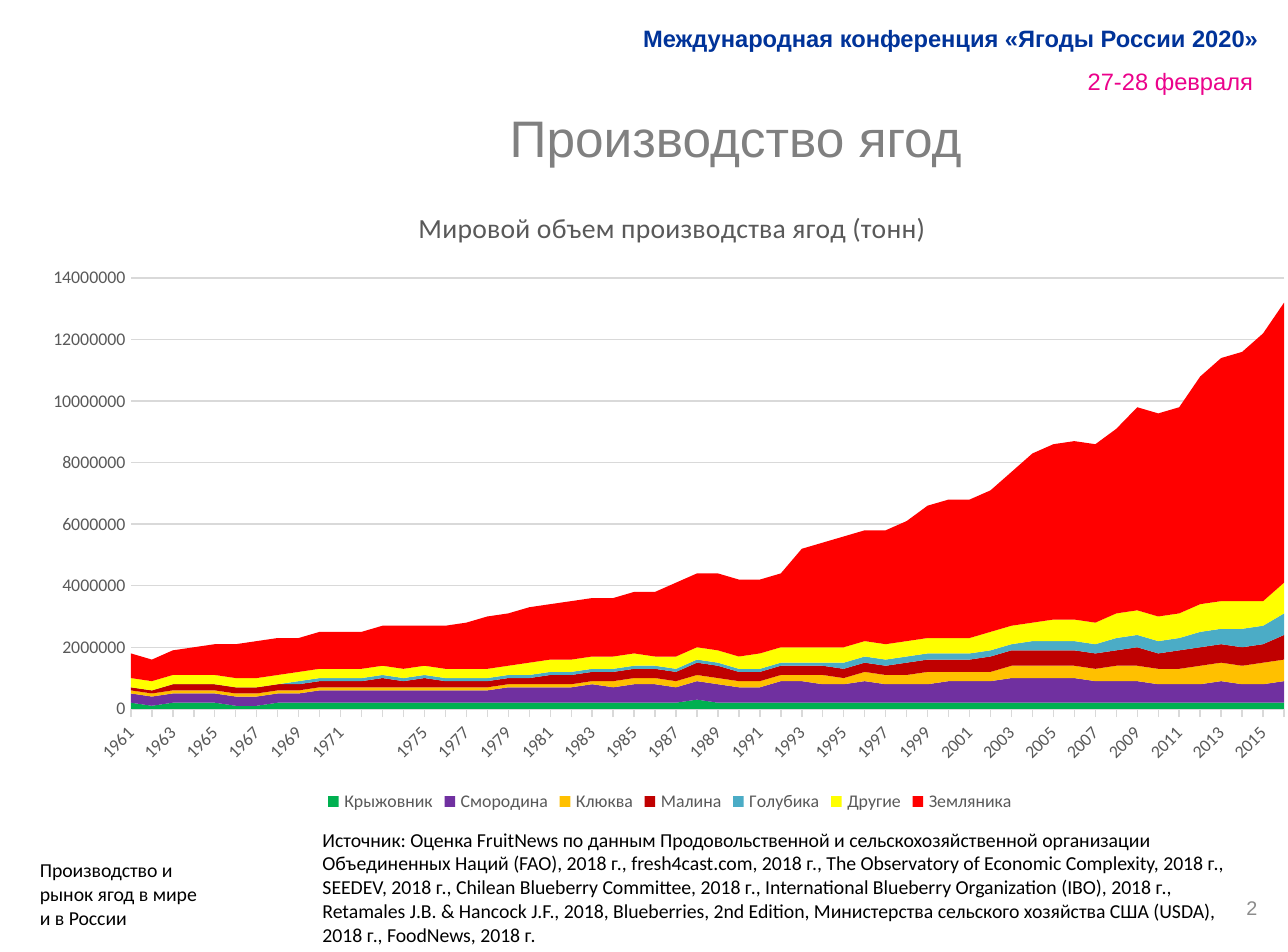
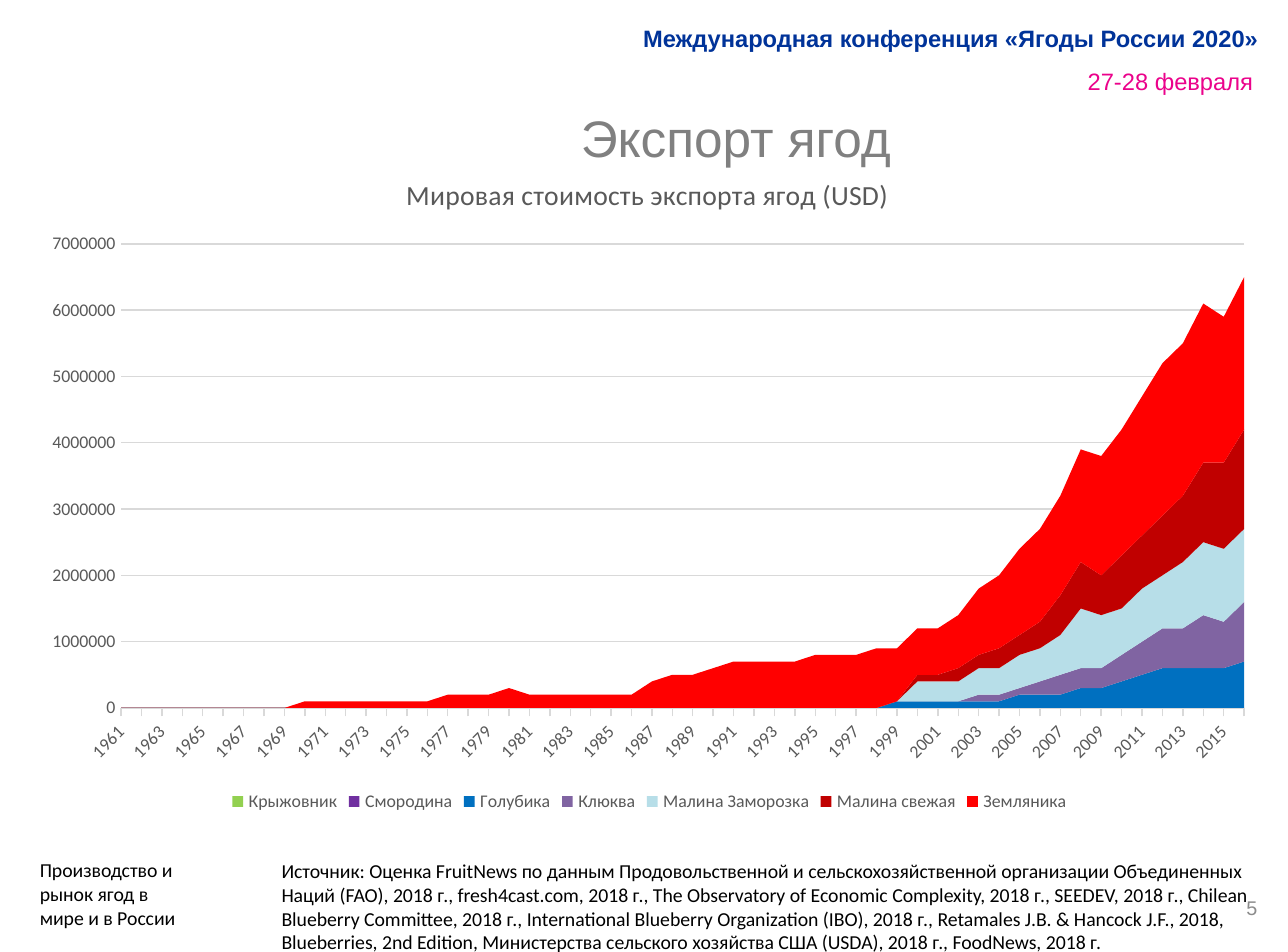
from pptx import Presentation
from pptx.chart.data import CategoryChartData
from pptx.dml.color import RGBColor
from pptx.enum import chart as ch, text as tx
from pptx.oxml import parse_xml
from pptx.oxml.ns import nsdecls
from pptx.util import Pt

HUES = {
    "navy": "003399", "pink": "EB028B", "head": "808080", "page": "8C8C8C",
    "ink": "000000", "axis": "595959", "grid": "D9D9D9",
    "green": "00B050", "lime": "92D050", "plum": "7030A0", "gold": "FFC000",
    "wine": "C00000", "teal": "4BACC6", "sun": "FFFF00", "red": "FF0000",
    "blue": "0070C0", "mauve": "8064A2", "ice": "B7DEE8",
}
ALIGN = tx.PP_ALIGN
MID = tx.MSO_ANCHOR.MIDDLE
GROW = tx.MSO_AUTO_SIZE.SHAPE_TO_FIT_TEXT
SLIM = {"margin_left": Pt(5.76), "margin_right": Pt(5.76), "margin_top": Pt(2.88), "margin_bottom": Pt(2.88)}
FONTS = {
    "conf": {"name": "Arial", "size": Pt(12), "bold": True, "hue": "navy"},
    "date": {"name": "Arial", "size": Pt(12), "hue": "pink"},
    "title": {"name": "Arial", "size": Pt(26), "hue": "head"},
    "page": {"name": "Arial", "size": Pt(10), "hue": "page"},
    "body": {"name": "Calibri", "size": Pt(10), "hue": "ink"},
    "axis": {"name": "Calibri", "size": Pt(9), "hue": "axis"},
    "chart": {"name": "Calibri", "size": Pt(14), "bold": False, "hue": "axis"},
}
SOURCE = (
    "Источник: Оценка FruitNews по данным Продовольственной и сельскохозяйственной организации "
    "Объединенных Наций (FAO), 2018 г., fresh4cast.com, 2018 г., The Observatory of Economic Complexity, "
    "2018 г., SEEDEV, 2018 г., Chilean Blueberry Committee, 2018 г., International Blueberry Organization "
    "(IBO), 2018 г., Retamales J.B. & Hancock J.F., 2018, Blueberries, 2nd Edition, Министерства сельского "
    "хозяйства США (USDA), 2018 г., FoodNews, 2018 г."
)
YEARS = [str(year) for year in range(1961, 2017)]
UNIT = 100000
CROPS = [
    ("Крыжовник", "green", [2, 1, 2, 2, 2, 1, 1] + [2] * 20 + [3] + [2] * 28),
    ("Смородина", "plum", [3] * 9 + [4] * 9 + [5] * 4 + [6, 5, 6, 6, 5, 6, 6, 5, 5, 7, 7, 6, 6, 7, 6, 6, 6,
                           7, 7, 7, 8, 8, 8, 8, 7, 7, 7, 6, 6, 6, 7, 6, 6, 7]),
    ("Клюква", "gold", [1] * 23 + [2] * 10 + [3, 2, 3, 3, 3, 4, 3, 3, 3, 4, 4, 4, 4, 4,
                        5, 5, 5, 5, 6, 6, 6, 7, 7]),
    ("Малина", "wine", [1, 1] + [2] * 10 + [3, 2, 3] + [2] * 5 + [3] * 7 + [4, 4] + [3] * 8
     + [4] * 4 + [5] * 7 + [6, 5] + [6] * 5 + [8]),
    ("Голубика", "teal", [0] * 8 + [1] * 26 + [2] * 9 + [3] * 4 + [4] * 4 + [5, 5, 6, 6, 7]),
    ("Другие", "sun", [3] * 19 + [4] * 6 + [3] + [4] * 4 + [5] * 11 + [6] * 3 + [7] * 3 + [8] * 4
     + [9, 9, 9, 8, 10]),
    ("Земляника", "red", [8, 7, 8, 9, 10, 11, 12, 12, 11, 12, 12, 12, 13, 14, 13, 14, 15, 17, 17, 18, 18,
                          19, 19, 19, 20, 21, 24, 24, 25, 25, 24, 24, 32, 34, 36, 36, 37, 39, 43, 45, 45,
                          46, 50, 55, 57, 58, 58, 60, 66, 66, 67, 74, 79, 81, 87, 91]),
]
TRADE = [
    ("Крыжовник", "lime", [0] * 56),
    ("Смородина", "plum", [0] * 56),
    ("Голубика", "blue", [0] * 38 + [1] * 6 + [2, 2, 2, 3, 3, 4, 5, 6, 6, 6, 6, 7]),
    ("Клюква", "mauve", [0] * 42 + [1, 1, 1, 2, 3, 3, 3, 4, 5, 6, 6, 8, 7, 9]),
    ("Малина Заморозка", "ice", [None] * 39 + [3, 3, 3, 4, 4, 5, 5, 6, 9, 8, 7, 8, 8, 10, 11, 11, 11]),
    ("Малина свежая", "wine", [None] * 39 + [1, 1, 2, 2, 3, 3, 4, 6, 7, 6, 8, 8, 9, 10, 12, 13, 15]),
    ("Земляника", "red", [0] * 9 + [1] * 7 + [2, 2, 2, 3] + [2] * 6 + [4, 5, 5, 6, 7, 7, 7, 7, 8, 8, 8, 9,
                          8, 7, 7, 8, 10, 11, 13, 14, 15, 17, 18, 19, 21, 23, 23, 24, 22, 23]),
]
PAGES = [
    {"title": "Производство ягод", "page": "2", "foot": 98, "source": (156.2, 415.4, 484, 85.7),
     "chart": {"box": (14.4, 93.6, 649.4, 320.4), "plot": (51.9, 47.2, 583.8, 218.2),
               "head": "Мировой объем производства ягод (тонн)", "rows": CROPS, "step": 2000000,
               "years": ["" if year == "1973" else year for year in YEARS]}},
    {"title": "Экспорт ягод", "page": "5", "foot": 90.7, "source": (135.4, 431.3, 504.7, 74.2),
     "chart": {"box": (14.4, 76.3, 628.6, 337.7), "plot": (46.9, 47.2, 568.6, 235),
               "head": "Мировая стоимость экспорта ягод (USD)", "rows": TRADE, "step": 1000000,
               "years": YEARS}},
]


def rgb(hue):
    return RGBColor.from_string(HUES[hue])


def apply(item, values):
    for key, value in values.items():
        setattr(item, key, value)


def style(font, kind):
    values = dict(FONTS[kind])
    font.color.rgb = rgb(values.pop("hue"))
    apply(font, values)


def write(slide, box, words, kind, frame=SLIM, **para):
    area = slide.shapes.add_textbox(*map(Pt, box)).text_frame
    apply(area, {"word_wrap": True, **frame})
    line = area.paragraphs[0]
    apply(line, para)
    run = line.add_run()
    run.text = words
    style(run.font, kind)


def layout(part, target, **spots):
    for old in part.findall("{*}layout"):
        part.remove(old)
    inner = f'<c:layoutTarget val="{target}"/>' if target else ""
    modes = "".join(f'<c:{key}Mode val="edge"/>' for key in "xy")
    sizes = "".join(f'<c:{key} val="{value:.4f}"/>' for key, value in spots.items())
    node = parse_xml(f'<c:layout {nsdecls("c")}><c:manualLayout>{inner}{modes}{sizes}'
                     '</c:manualLayout></c:layout>')
    words = part.find("{*}tx")
    if words is None:
        part.insert(0, node)
    else:
        words.addnext(node)


def axes(chart, step):
    cat, val = chart.category_axis, chart.value_axis
    for axis in (cat, val):
        style(axis.tick_labels.font, "axis")
    cat.major_tick_mark = ch.XL_TICK_MARK.OUTSIDE
    apply(val, {"major_tick_mark": ch.XL_TICK_MARK.NONE, "has_major_gridlines": True,
                "minimum_scale": 0, "maximum_scale": 7 * step, "major_unit": step})
    apply(val.tick_labels, {"number_format": "General", "number_format_is_linked": False})
    val.format.line.fill.background()
    for line in (cat.format.line, val.major_gridlines.format.line):
        line.color.rgb = rgb("grid")
        line.width = Pt(0.75)
    turn = cat._element.find(".//{*}bodyPr")
    turn.set("rot", "-2700000")
    turn.set("vert", "horz")
    for old in cat._element.findall("{*}tickLblSkip"):
        cat._element.remove(old)
    cat._element.find("{*}noMultiLvlLbl").addprevious(
        parse_xml(f'<c:tickLblSkip {nsdecls("c")} val="2"/>'))


def graph(slide, box, plot, head, rows, step, years):
    data = CategoryChartData(number_format="General")
    data.categories = years
    for name, _, vals in rows:
        data.add_series(name, [None if val is None else val * UNIT for val in vals])
    chart = slide.shapes.add_chart(ch.XL_CHART_TYPE.AREA_STACKED, *map(Pt, box), data).chart
    style(chart.font, "body")
    chart.has_title = True
    area = chart.chart_title.text_frame
    area.text = head
    style(area.paragraphs[0].runs[0].font, "chart")
    chart.chart_title.include_in_layout = False
    layout(chart.chart_title._element, "", x=0.3, y=0.03)
    chart.has_legend = True
    apply(chart.legend, {"position": ch.XL_LEGEND_POSITION.BOTTOM, "include_in_layout": False})
    style(chart.legend.font, "axis")
    chart.plots[0].vary_by_categories = False
    for part, (_, hue, _) in zip(chart.plots[0].series, rows):
        part.format.fill.solid()
        part.format.fill.fore_color.rgb = rgb(hue)
        part.format.line.fill.background()
    axes(chart, step)
    root = chart._chartSpace
    wide, high = box[2:]
    left, top, span, rise = plot
    layout(root.find(".//{*}plotArea"), "inner",
           x=left / wide, y=top / high, w=span / wide, h=rise / high)
    for gap in root.findall(".//{*}dispBlanksAs"):
        gap.set("val", "zero")
    for point in root.findall(".//{*}cat//{*}pt"):
        if not point.find("{*}v").text:
            point.getparent().remove(point)


def header(slide, title):
    write(slide, (524.2, 25.2, 115.9, 26.6), "27-28 февраля", "date",
          alignment=ALIGN.RIGHT, line_spacing=Pt(20.4))
    write(slide, (304.6, 5, 338.4, 28.1), "Международная конференция «Ягоды России 2020»", "conf",
          {**SLIM, "vertical_anchor": MID}, alignment=ALIGN.RIGHT)
    write(slide, (105.1, 51.1, 535, 56.2), title, "title", alignment=ALIGN.CENTER)


def footer(slide, page, wide, box):
    write(slide, (490.3, 446.4, 151.9, 25.9), page, "page",
          {**SLIM, "vertical_anchor": MID}, alignment=ALIGN.RIGHT)
    write(slide, (14.4, 431.3, wide, 42.5), "Производство и рынок ягод в мире и в России", "body",
          {**SLIM, "auto_size": GROW}, line_spacing=Pt(12.2))
    write(slide, box, SOURCE, "body", {"auto_size": GROW})


def main():
    deck = Presentation()
    apply(deck, {"slide_width": Pt(652), "slide_height": Pt(482)})
    for page in PAGES:
        slide = deck.slides.add_slide(deck.slide_layouts[6])
        header(slide, page["title"])
        graph(slide, **page["chart"])
        footer(slide, page["page"], page["foot"], page["source"])
    deck.save("out.pptx")


if __name__ == "__main__":
    main()
